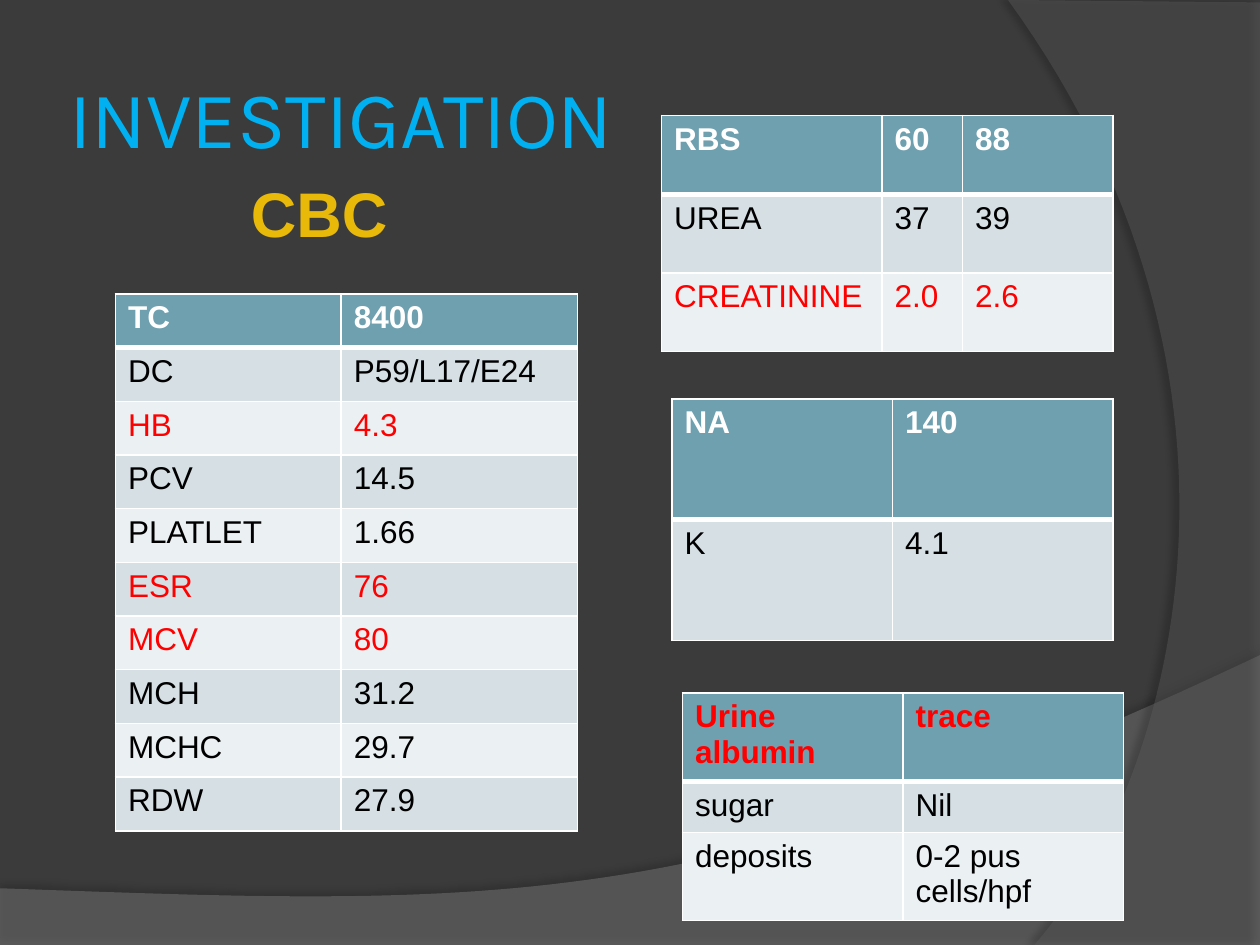
from dataclasses import dataclass
from lxml.etree import SubElement
from pptx import Presentation
from pptx.dml.color import RGBColor
from pptx.enum.text import MSO_ANCHOR, MSO_AUTO_SIZE, PP_ALIGN
from pptx.oxml import parse_xml
from pptx.oxml.ns import qn
from pptx.util import Pt

NS = 'xmlns:a="http://schemas.openxmlformats.org/drawingml/2006/main"'
WHITE, BLACK, RED = "FFFFFF", "000000", "FF0000"
HEAD, BANDS = "6EA0B0", ("D5DFE4", "EBF0F2")
GOLD = ((0, "FFDC75"), (75, "E9B90A"), (100, "9E8700"))


@dataclass
class Grid:
    left: float
    top: float
    cols: list[float]
    high: float
    rows: list[list[str]]
    red: tuple[int, ...] = ()


@dataclass
class Wave:
    """A cubic curve closed through corner points."""
    curve: list[tuple[float, float]]
    edge: list[tuple[float, float]]
    tint: str
    alpha: int
    shade: int
    dist: float
    angle: int


WAVES = [
    Wave([(720, 374.4), (402.5, 524.9), (281.5, 517.7), (0, 507.6)],
         [(0, 540), (720, 540)], "7F7F7F", 45, 35, 3.5, 270),
    Wave([(591.1, 540), (673.2, 445.7), (733, 216), (576, 0)],
         [(720, 1.4), (720, 540)], "5E5E5E", 40, 45, 4, 180),
]

GRIDS = [
    Grid(66, 168, [129, 135], 30.68, [
        ["TC", "8400"], ["DC", "P59/L17/E24"], ["HB", "4.3"],
        ["PCV", "14.5"], ["PLATLET", "1.66"], ["ESR", "76"],
        ["MCV", "80"], ["MCH", "31.2"], ["MCHC", "29.7"],
        ["RDW", "27.9"]], (2, 5, 6)),
    Grid(378, 66, [126, 46, 86], 45, [
        ["RBS", "60", "88"], ["UREA", "37", "39"],
        ["CREATININE", "2.0", "2.6"]], (2,)),
    Grid(384, 228, [126, 126], 69, [["NA", "140"], ["K", "4.1"]]),
    Grid(390, 396, [126, 126], 29.2, [
        ["Urine albumin", "trace"], ["sugar", "Nil"],
        ["deposits", "0-2 pus cells/hpf"]], (0,)),
]


def paint(fill, tint: str) -> None:
    fill.solid()
    fill.fore_color.rgb = RGBColor.from_string(tint)


def write(para, text: str, size: float, face: str, tint: str, bold=False):
    run = para.add_run()
    run.text = text
    font = run.font
    font.size, font.name, font.bold = Pt(size), face, bold
    paint(font.fill, tint)
    return run


def bend(pts: list[tuple[float, float]], steps: int = 60) -> list:
    """Sample a cubic Bezier curve."""
    def at(t: float, axis: int) -> int:
        a, b, c, d = (p[axis] for p in pts)
        u = 1 - t
        return Pt(a * u**3 + 3 * b * u * u * t + 3 * c * u * t * t + d * t**3)
    return [(at(i / steps, 0), at(i / steps, 1)) for i in range(steps + 1)]


def draw_wave(slide, wave: Wave) -> None:
    first, *rest = bend(wave.curve)
    rest += [(Pt(x), Pt(y)) for x, y in wave.edge]
    pen = slide.shapes.build_freeform(*first)
    pen.add_line_segments(rest, close=True)
    shape = pen.convert_to_shape()
    shape.line.fill.background()
    paint(shape.fill, wave.tint)
    props = shape._element.spPr
    tone = props.find(qn("a:solidFill"))[0]
    SubElement(tone, qn("a:alpha"), val=str(wave.alpha * 1000))
    props.append(parse_xml(
        f'<a:effectLst {NS}><a:outerShdw blurRad="{Pt(4)}" '
        f'dist="{Pt(wave.dist)}" dir="{wave.angle * 60000}" algn="ctr" '
        f'rotWithShape="0"><a:srgbClr val="{BLACK}">'
        f'<a:alpha val="{wave.shade * 1000}"/></a:srgbClr>'
        '</a:outerShdw></a:effectLst>'))


def rule(cell, row: int) -> None:
    """Give a cell white borders, thick below the header row."""
    props = cell._tc.get_or_add_tcPr()
    for side in "LRTB":
        thick = (row, side) in ((0, "B"), (1, "T"))
        props.append(parse_xml(
            f'<a:ln{side} {NS} w="{Pt(3 if thick else 1)}"><a:solidFill>'
            f'<a:srgbClr val="{WHITE}"/></a:solidFill></a:ln{side}>'))


def draw_grid(slide, grid: Grid) -> None:
    count = len(grid.rows)
    table = slide.shapes.add_table(
        count, len(grid.cols), Pt(grid.left), Pt(grid.top),
        Pt(sum(grid.cols)), Pt(grid.high * count)).table
    for col, wide in zip(table.columns, grid.cols):
        col.width = Pt(wide)
    for r, words in enumerate(grid.rows):
        table.rows[r].height = Pt(grid.high)
        tint = RED if r in grid.red else BLACK if r else WHITE
        for c, word in enumerate(words):
            cell = table.cell(r, c)
            rule(cell, r)
            paint(cell.fill, BANDS[(r - 1) % 2] if r else HEAD)
            write(cell.text_frame.paragraphs[0], word, 18, "Arial",
                  tint, r == 0)


def add_box(slide, left: float, top: float, wide: float, high: float):
    box = slide.shapes.add_textbox(Pt(left), Pt(top), Pt(wide), Pt(high))
    box.text_frame.word_wrap = True
    return box.text_frame


def draw_title(slide) -> None:
    frame = add_box(slide, 36, 21.6, 588, 90)
    frame.vertical_anchor = MSO_ANCHOR.MIDDLE
    frame.margin_left = frame.margin_right = Pt(3.6)
    write(frame.paragraphs[0], "INVESTIGATION", 46, "Karla", "00B0F0")


def draw_label(slide) -> None:
    frame = add_box(slide, 96, 96, 172.8, 50.9)
    frame.auto_size = MSO_AUTO_SIZE.SHAPE_TO_FIT_TEXT
    para = frame.paragraphs[0]
    para.alignment = PP_ALIGN.CENTER
    run = write(para, "CBC", 36, "Arial", GOLD[1][1], True)
    stops = "".join(f'<a:gs pos="{pos * 1000}"><a:srgbClr val="{tint}"/></a:gs>'
                    for pos, tint in GOLD)
    props = run.font._element
    props.replace(props.find(qn("a:solidFill")), parse_xml(
        f'<a:gradFill {NS}><a:gsLst>{stops}</a:gsLst>'
        '<a:lin ang="5400000" scaled="0"/></a:gradFill>'))


def main() -> None:
    deck = Presentation()
    deck.slide_width, deck.slide_height = Pt(720), Pt(540)
    slide = deck.slides.add_slide(deck.slide_layouts[6])
    paint(slide.background.fill, "3B3B3B")
    for wave in WAVES:
        draw_wave(slide, wave)
    draw_title(slide)
    draw_label(slide)
    for grid in GRIDS:
        draw_grid(slide, grid)
    deck.save("out.pptx")


if __name__ == "__main__":
    main()
